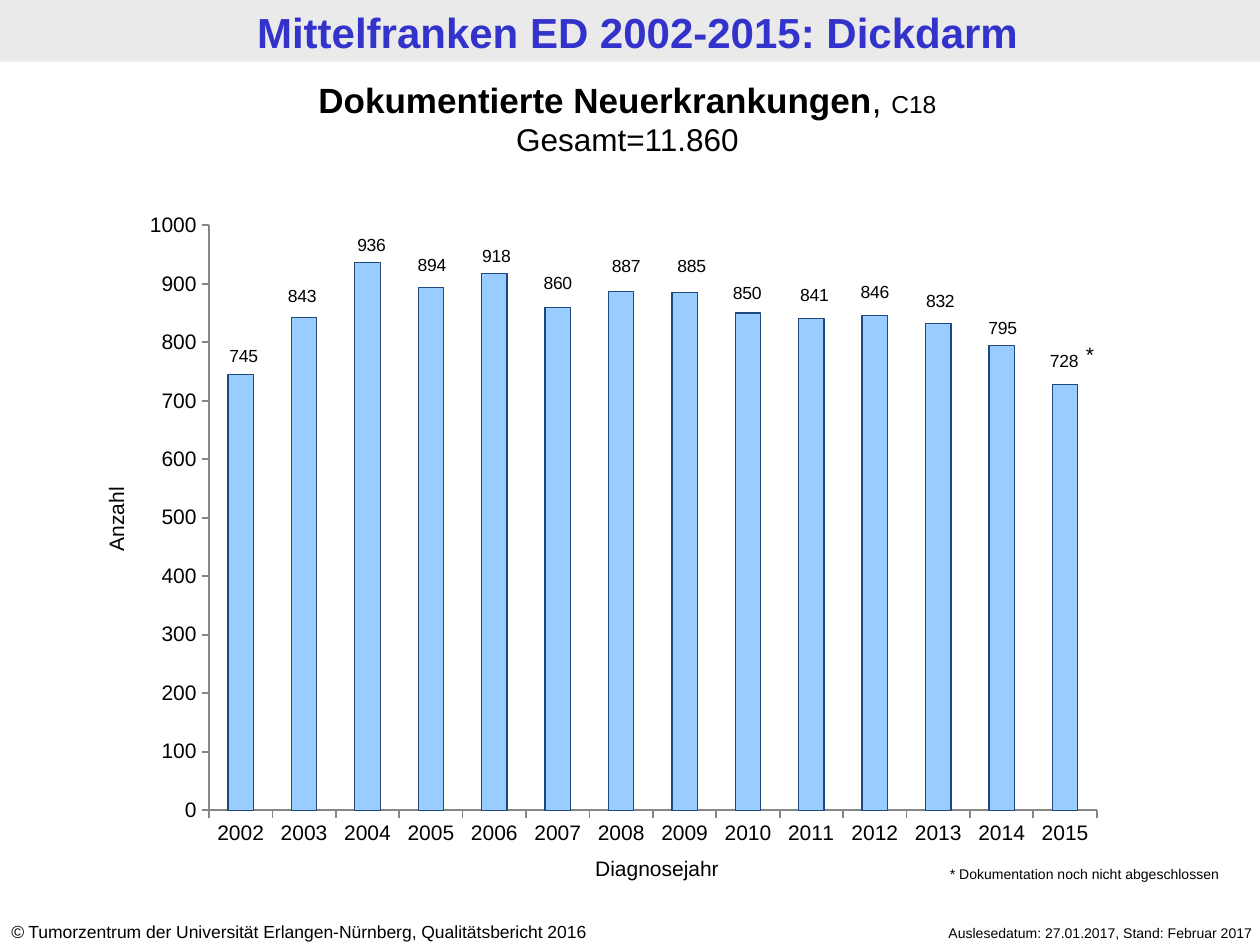
from lxml import etree
from pptx import Presentation
from pptx import util as u
from pptx.chart.data import CategoryChartData
from pptx.dml.color import RGBColor
from pptx.enum import chart as ch
from pptx.enum import shapes, text
from pptx.oxml.ns import qn

BLACK = RGBColor(0x00, 0x00, 0x00)
BAND_GREY = RGBColor(0xEA, 0xEA, 0xEA)
TITLE_BLUE = RGBColor(0x33, 0x33, 0xCC)
BAR_BLUE = RGBColor(0x99, 0xCC, 0xFF)
BAR_EDGE = RGBColor(0x1F, 0x49, 0x7D)
AXIS_GREY = RGBColor(0x86, 0x86, 0x86)
LEFT, CENTER, RIGHT = text.PP_ALIGN.LEFT, text.PP_ALIGN.CENTER, text.PP_ALIGN.RIGHT

prs = Presentation()
prs.slide_width, prs.slide_height = u.Inches(10), u.Inches(7.5)
COL, ROW = prs.slide_width / 100, prs.slide_height / 75  # grid of 100 x 75
slide = prs.slides.add_slide(prs.slide_layouts[5])


def grid(left, top, width, height):
    return [u.Emu(round(n * unit)) for n, unit in
            zip((left, top, width, height), (COL, ROW, COL, ROW))]


def write(frame, lines, align):
    """Fill a frame with lines, each a list of (wording, font format)."""
    frame.word_wrap = True
    frame.vertical_anchor = text.MSO_ANCHOR.TOP
    for number, line in enumerate(lines):
        paragraph = frame.paragraphs[0] if number == 0 else frame.add_paragraph()
        paragraph.alignment = align
        for wording, style in line:
            run = paragraph.add_run()
            run.text = wording
            style = {"name": "Arial", "color": BLACK, **style}
            run.font.color.rgb = style.pop("color")
            for key, value in style.items():
                setattr(run.font, key, value)


# Title on its grey band
band = slide.shapes.add_shape(shapes.MSO_SHAPE.RECTANGLE, *grid(0, 0, 100, 4.9))
band.shadow.inherit = False
band.fill.solid()
band.fill.fore_color.rgb = BAND_GREY
band.line.fill.background()

title = slide.shapes.title
title.left, title.top, title.width, title.height = grid(0.6, 0.1, 100, 4.9)
band.element.addnext(title.element)
for side, inset in {"left": 0.09, "right": 0.09, "top": 0.04, "bottom": 0.04}.items():
    setattr(title.text_frame, f"margin_{side}", u.Inches(inset))
title.text_frame.auto_size = text.MSO_AUTO_SIZE.NONE
write(title.text_frame, [[("Mittelfranken ED 2002-2015: Dickdarm",
                           {"size": u.Pt(24), "bold": True, "color": TITLE_BLUE})]], CENTER)

# Chart of new cases per year; each label is nudged (right, up) from its bar top
counts = [745, 843, 936, 894, 918, 860, 887, 885, 850, 841, 846, 832, 795, 728]
nudges = [(3, 18), (-2, 21), (4, 17), (1, 22), (2, 17), (0, 24), (5, 25),
          (7, 26), (-1, 20), (3, 23), (0, 23), (2, 22), (1, 17), (-1, 23)]
TOP_VALUE = 1000
PLOT = {"x": 0.066, "y": 0.029, "w": 0.914, "h": 0.903}
CHART_W, CHART_H = 971, 648  # chart size in nudge steps

data = CategoryChartData()
data.categories = [str(year) for year in range(2002, 2016)]
data.add_series("Series 1", counts)
cases = slide.shapes.add_chart(ch.XL_CHART_TYPE.COLUMN_STACKED,
                               *grid(11.5, 16.4, 77.1, 51.4), data).chart
cases.has_legend = cases.has_title = False
cases.font.name, cases.font.size, cases.font.color.rgb = "Arial", u.Pt(12), BLACK


def manual_layout(values):
    layout = etree.Element(qn("c:layout"))
    manual = etree.SubElement(layout, qn("c:manualLayout"))
    for tag, value in values.items():
        etree.SubElement(manual, qn(f"c:{tag}")).set("val", str(value))
    return layout


plot_area = cases.element.find(".//" + qn("c:plotArea"))
for old in plot_area.findall(qn("c:layout")):
    plot_area.remove(old)
plot_area.insert(0, manual_layout({"layoutTarget": "inner", "xMode": "edge",
                                   "yMode": "edge", **PLOT}))

for axis in (cases.category_axis, cases.value_axis):
    axis.has_major_gridlines = False
    axis.major_tick_mark = ch.XL_TICK_MARK.OUTSIDE
    axis.minor_tick_mark = ch.XL_TICK_MARK.NONE
    axis.format.line.color.rgb = AXIS_GREY
    axis.format.line.width = u.Pt(1)
for key, value in {"minimum_scale": 0, "maximum_scale": TOP_VALUE, "major_unit": 100}.items():
    setattr(cases.value_axis, key, value)

bars = cases.plots[0]
bars.gap_width, bars.overlap, bars.vary_by_categories = 150, 100, False
series = bars.series[0]
series.format.fill.solid()
series.format.fill.fore_color.rgb = BAR_BLUE
series.format.line.color.rgb = BAR_EDGE
series.format.line.width = u.Pt(0.75)
series.data_labels.show_value = True
series.data_labels.font.size = u.Pt(10)

for index in range(len(counts)):
    label_font = series.points[index].data_label.font
    label_font.name, label_font.size, label_font.color.rgb = "Arial", u.Pt(10), BLACK
label_elements = cases.element.iter(qn("c:dLbl"))
for label, count, (right, up) in zip(label_elements, counts, nudges):
    half_bar = count / TOP_VALUE * PLOT["h"] / 2
    label.find(qn("c:idx")).addnext(manual_layout(
        {"x": round(right / CHART_W, 4), "y": round(-half_bar - up / CHART_H, 4)}))

# No leader lines between the bars and their moved labels
all_labels = plot_area.find(f".//{qn('c:ser')}/{qn('c:dLbls')}")
for old in all_labels.findall(qn("c:showLeaderLines")):
    all_labels.remove(old)
etree.SubElement(all_labels, qn("c:showLeaderLines")).set("val", "0")

# Heading, axis names, notes and footer: place, alignment, rotation, lines
size = {points: {"size": u.Pt(points)} for points in (8, 10, 12, 14, 18, 20)}
captions = [
    ((-0.4, 5.7, 100.4, 7.4), CENTER, 0,
     [[("Dokumentierte Neuerkrankungen", {**size[20], "bold": True}),
       (", ", size[20]), ("C18", size[14])],
      [("Gesamt=11.860", size[18])]]),
    ((40.9, 67.4, 22.5, 3), CENTER, 0, [[("Diagnosejahr", size[12])]]),
    ((3.1, 39.7, 12.2, 3), CENTER, 270, [[("Anzahl", size[12])]]),
    ((83.9, 26.6, 3.9, 3), RIGHT, 0, [[("*", size[12])]]),
    ((74.4, 68.2, 24.4, 2.4), LEFT, 0,
     [[("* Dokumentation noch nicht abgeschlossen", size[8])]]),
    ((-0.1, 72.6, 52.4, 2.7), LEFT, 0,
     [[("©", {**size[10], "italic": True}),
       (" Tumorzentrum der Universität Erlangen-Nürnberg, Qualitätsbericht 2016", size[10])]]),
    ((66.5, 72.9, 33.9, 2.4), RIGHT, 0,
     [[("Auslesedatum: 27.01.2017, Stand: Februar 2017", size[8])]]),
]
for place, align, rotation, lines in captions:
    caption = slide.shapes.add_textbox(*grid(*place))
    caption.rotation = rotation
    write(caption.text_frame, lines, align)

prs.save("out.pptx")
